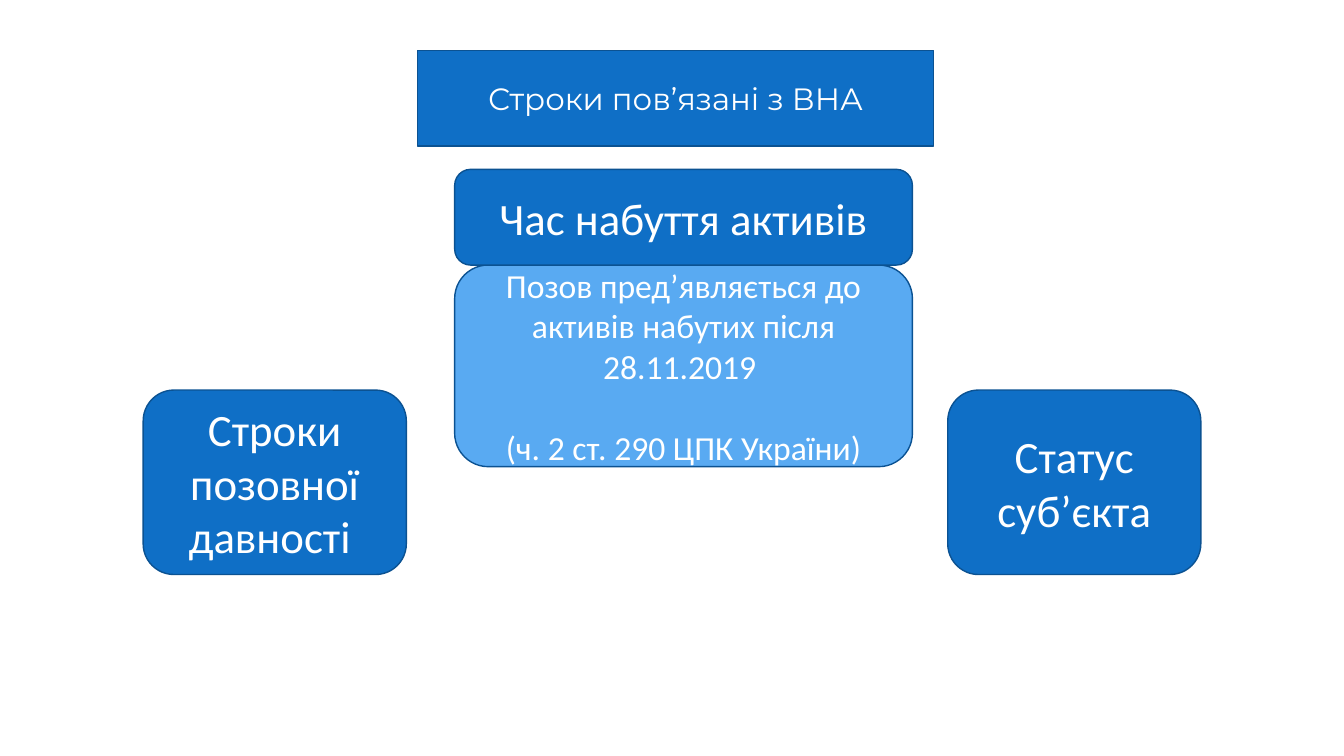
from lxml import etree
from pptx import Presentation
from pptx.dml.color import RGBColor
from pptx.enum.shapes import MSO_SHAPE
from pptx.enum.text import MSO_ANCHOR, MSO_AUTO_SIZE, PP_ALIGN
from pptx.oxml.ns import qn
from pptx.util import Inches, Pt

ROUNDED = MSO_SHAPE.ROUNDED_RECTANGLE
MIDDLE = MSO_ANCHOR.MIDDLE
CENTER = PP_ALIGN.CENTER
NO_AUTOFIT = MSO_AUTO_SIZE.NONE
COLORS = {"dark": "0F6FC6", "light": "59AAF2", "border": "0B5292", "text": "FFFFFF"}

CENTER_LEFT, CENTER_WIDTH = 4.51, 4.54
BANNER_HEIGHT = 0.95
TIME_TOP = 1.68
SIDE_TOP, SIDE_HEIGHT = 3.87, 1.83


def color(name):
    return RGBColor.from_string(COLORS[name])


def style_box(box, text, size, font="Calibri", fill="dark"):
    box.fill.solid()
    box.fill.fore_color.rgb = color(fill)
    box.line.color.rgb = color("border")
    box.line.width = Pt(1)
    frame = box.text_frame
    frame.text = text
    frame.word_wrap = True
    frame.auto_size = NO_AUTOFIT
    frame.vertical_anchor = MIDDLE
    for paragraph in frame.paragraphs:
        paragraph.alignment = CENTER
        for run in paragraph.runs:
            run.font.name = font
            run.font.size = Pt(size)
            run.font.color.rgb = color("text")


def add_box(slide, left, top, width, height, text, size=32, fill="dark"):
    box = slide.shapes.add_shape(
        ROUNDED, Inches(left), Inches(top), Inches(width), Inches(height))
    box.shadow.inherit = False
    style_box(box, text, size, fill=fill)
    return box


def add_title(slide, left, top, width, height, text):
    """Turn the title placeholder into a rounded banner."""
    title = slide.shapes.title
    title.left, title.top = Inches(left), Inches(top)
    title.width, title.height = Inches(width), Inches(height)
    outline = etree.Element(qn("a:prstGeom"), prst="roundRect")
    etree.SubElement(outline, qn("a:avLst"))
    title.element.spPr.find(qn("a:xfrm")).addnext(outline)
    style_box(title, text, 22, font="Montserrat")


def main():
    prs = Presentation()
    prs.slide_width, prs.slide_height = Inches(13.33), Inches(7.5)
    slide = prs.slides.add_slide(prs.slide_layouts.get_by_name("Title Only"))

    add_title(slide, 4.14, 0.5, 5.12, BANNER_HEIGHT, "Строки пов’язані з ВНА")
    claim = add_box(
        slide, CENTER_LEFT, TIME_TOP + BANNER_HEIGHT, CENTER_WIDTH, 2,
        "Позов пред’являється до активів набутих після 28.11.2019 \n"
        "(ч. 2 ст. 290 ЦПК України)", size=24, fill="light")
    claim.text_frame.paragraphs[1].space_before = Pt(29)
    add_box(slide, CENTER_LEFT, TIME_TOP, CENTER_WIDTH, BANNER_HEIGHT,
            "Час набуття активів")
    add_box(slide, 1.42, SIDE_TOP, 2.61, SIDE_HEIGHT, "Строки позовної давності ")
    add_box(slide, 9.4, SIDE_TOP, 2.51, SIDE_HEIGHT, "Статус суб’єкта")

    prs.save("out.pptx")


if __name__ == "__main__":
    main()
